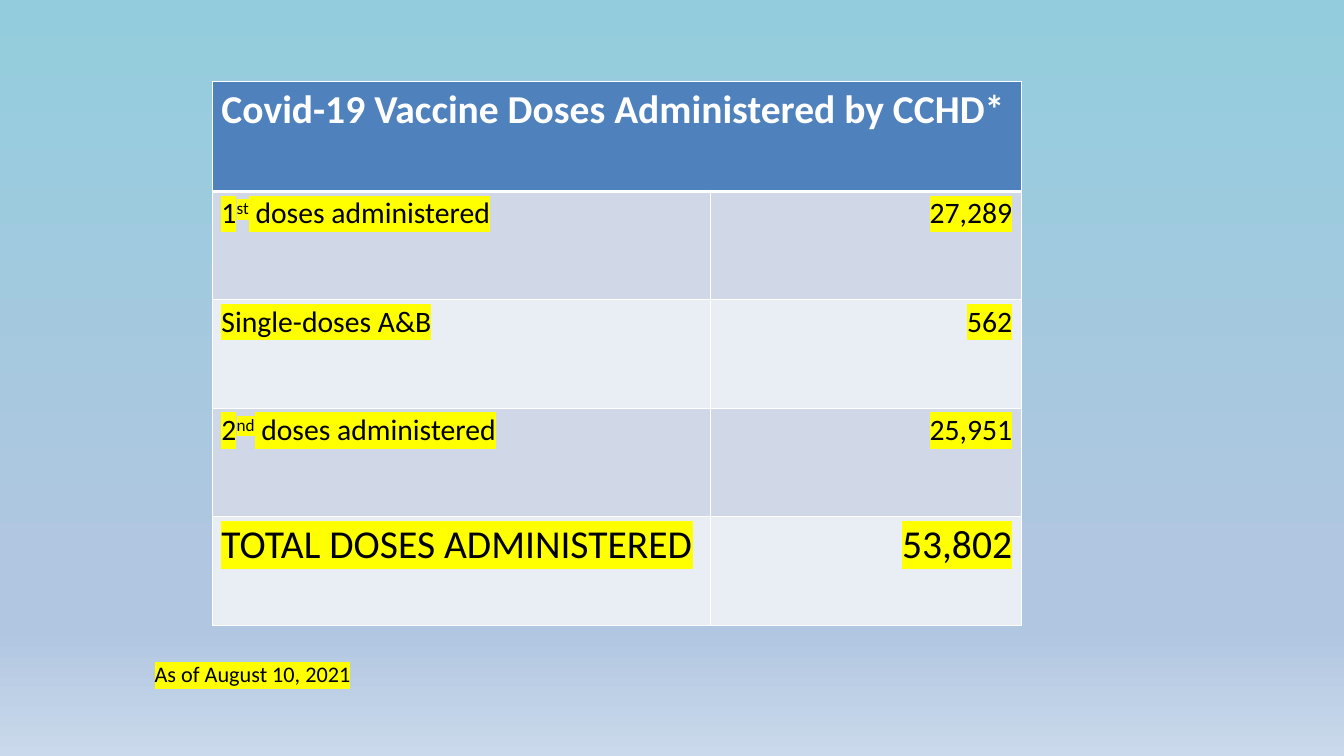
from dataclasses import dataclass

from lxml.etree import Element, SubElement
from pptx import Presentation
from pptx.dml.color import RGBColor
from pptx.enum.text import MSO_AUTO_SIZE as AutoSize, PP_ALIGN as Align
from pptx.oxml.ns import qn
from pptx.slide import Slide
from pptx.table import Table, _Cell as Cell
from pptx.text.text import _Paragraph as Paragraph
from pptx.util import Inches, Pt


@dataclass(frozen=True)
class Theme:
    font: str = "Calibri"
    large: int = 32
    body: int = 24
    note: int = 18
    white: str = "FFFFFF"
    black: str = "000000"
    highlight: str = "FFFF00"
    header: str = "4F81BD"
    bands: tuple[str, str] = ("D0D8E8", "E9EDF4")
    sky: tuple[tuple[int, str], ...] = (
        (0, "93CDDD"), (74, "B0C6E1"), (83, "B0C6E1"), (100, "CAD9EB"))
    thin: int = 1
    thick: int = 3


@dataclass(frozen=True)
class Span:
    text: str
    superscript: bool = False


@dataclass(frozen=True)
class DoseRow:
    label: tuple[Span, ...]
    count: str
    size: int


THEME = Theme()
TITLE = "Covid-19 Vaccine Doses Administered by CCHD*"
DATE_NOTE = "As of August 10, 2021"
DOSE_ROWS = (
    DoseRow((Span("1"), Span("st", True), Span(" doses administered")), "27,289", THEME.body),
    DoseRow((Span("Single-doses A&B"),), "562", THEME.body),
    DoseRow((Span("2"), Span("nd", True), Span(" doses administered")), "25,951", THEME.body),
    DoseRow((Span("TOTAL DOSES ADMINISTERED"),), "53,802", THEME.large),
)
COLUMN_WIDTHS = (5.6, 3.49)
HEADER_HEIGHT = 1.23
DOSE_HEIGHT = 1.22


def paint_background(slide: Slide) -> None:
    fill = slide.background.fill
    fill.gradient()
    fill.gradient_angle = 270
    stops = next(slide.element.iter(qn("a:gsLst")))
    for stop in list(stops):
        stops.remove(stop)
    for percent, color in THEME.sky:
        stop = SubElement(stops, qn("a:gs"), pos=str(percent * 1000))
        SubElement(stop, qn("a:srgbClr"), val=color)


def write_spans(paragraph: Paragraph, spans: tuple[Span, ...], size: int,
                color: str = THEME.black, bold: bool = False,
                highlighted: bool = True) -> None:
    for span in spans:
        run = paragraph.add_run()
        run.text = span.text
        font = run.font
        font.name = THEME.font
        font.size = Pt(size)
        font.bold = bold
        font.color.rgb = RGBColor.from_string(color)
        properties = run._r.get_or_add_rPr()
        if span.superscript:
            properties.set("baseline", "30000")
        if highlighted:
            marker = Element(qn("a:highlight"))
            SubElement(marker, qn("a:srgbClr"), val=THEME.highlight)
            properties.find(qn("a:solidFill")).addnext(marker)


def style_cell(cell: Cell, color: str, top: int, bottom: int) -> None:
    cell.fill.solid()
    cell.fill.fore_color.rgb = RGBColor.from_string(color)
    properties = cell._tc.get_or_add_tcPr()
    borders = (("a:lnL", THEME.thin), ("a:lnR", THEME.thin), ("a:lnT", top), ("a:lnB", bottom))
    for position, (tag, width) in enumerate(borders):
        border = Element(qn(tag), w=str(Pt(width)))
        SubElement(SubElement(border, qn("a:solidFill")), qn("a:srgbClr"), val=THEME.white)
        properties.insert(position, border)


def fill_dose_row(table: Table, index: int, dose: DoseRow) -> None:
    label, count = table.cell(index, 0), table.cell(index, 1)
    for cell in (label, count):
        style_cell(cell, THEME.bands[(index - 1) % 2],
                   THEME.thick if index == 1 else THEME.thin, THEME.thin)
    write_spans(label.text_frame.paragraphs[0], dose.label, dose.size)
    count_line = count.text_frame.paragraphs[0]
    count_line.alignment = Align.RIGHT
    write_spans(count_line, (Span(dose.count),), dose.size)


def add_dose_table(slide: Slide) -> None:
    height = HEADER_HEIGHT + DOSE_HEIGHT * len(DOSE_ROWS)
    table = slide.shapes.add_table(
        len(DOSE_ROWS) + 1, len(COLUMN_WIDTHS), Inches(2.39), Inches(0.92),
        Inches(sum(COLUMN_WIDTHS)), Inches(height)).table
    for column, width in zip(table.columns, COLUMN_WIDTHS):
        column.width = Inches(width)
    for index, row in enumerate(table.rows):
        row.height = Inches(DOSE_HEIGHT if index else HEADER_HEIGHT)
    title = table.cell(0, 0)
    title.merge(table.cell(0, 1))
    for cell in table.rows[0].cells:
        style_cell(cell, THEME.header, THEME.thin, THEME.thick)
    write_spans(title.text_frame.paragraphs[0], (Span(TITLE),), THEME.large,
                THEME.white, bold=True, highlighted=False)
    for index, dose in enumerate(DOSE_ROWS, start=1):
        fill_dose_row(table, index, dose)


def add_date_note(slide: Slide) -> None:
    note = slide.shapes.add_textbox(Inches(1.64), Inches(7.38), Inches(9.83), Inches(0.4))
    frame = note.text_frame
    frame.word_wrap = True
    frame.auto_size = AutoSize.SHAPE_TO_FIT_TEXT
    write_spans(frame.paragraphs[0], (Span(DATE_NOTE),), THEME.note)


def main() -> None:
    deck = Presentation()
    deck.slide_width = Inches(15.11)
    deck.slide_height = Inches(8.5)
    slide = deck.slides.add_slide(deck.slide_layouts[6])
    paint_background(slide)
    add_dose_table(slide)
    add_date_note(slide)
    deck.save("out.pptx")


if __name__ == "__main__":
    main()
